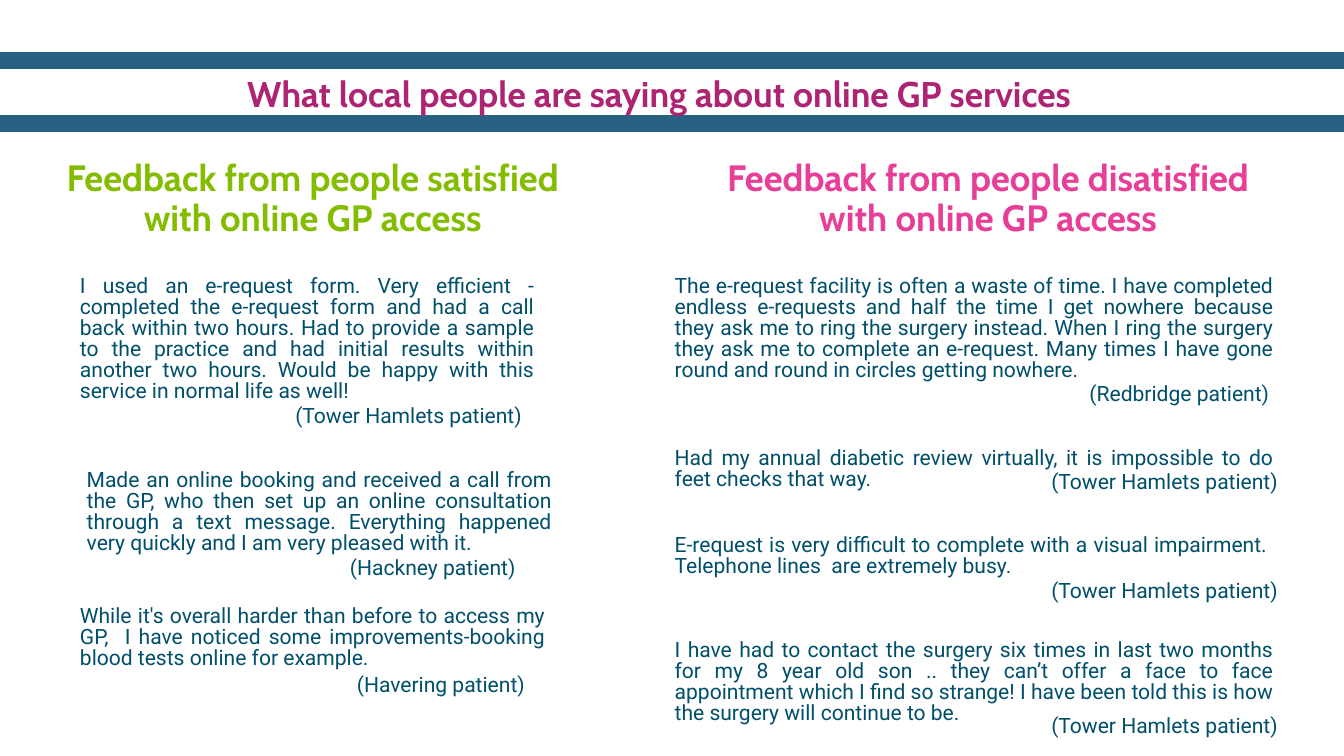
import pptx
import pptx.dml.color
import pptx.enum.shapes
import pptx.enum.text
import pptx.oxml
import pptx.util
from dataclasses import dataclass

Inches = pptx.util.Inches
Align = pptx.enum.text.PP_ALIGN


@dataclass(frozen=True)
class Style:
    font: str
    size: float
    lead: float
    color: str
    bold: bool = False
    align: Align = Align.CENTER


@dataclass(frozen=True)
class Theme:
    bar: str = "286181"
    bar_width: float = 18.75
    title: Style = Style("Cabin", 38.2, 53.5, "AD2473", True)
    good: Style = Style("Cabin", 39.2, 43.2, "84BD00", True)
    bad: Style = Style("Cabin", 39.2, 43.2, "E73E97", True)
    quote: Style = Style("Roboto", 22.6, 22.6, "004F6B", align=Align.JUSTIFY)
    source: Style = Style("Roboto", 22.6, 22.6, "004F6B")


THEME = Theme()
SOURCE_WIDTH, SOURCE_HEIGHT = 6.76, 0.33

QUOTES = [
    ((1.19, 4.11, 6.76, 1.9),
     "I used an e-request form. Very efficient - completed the e-request form and had a call "
     "back within two hours. Had to provide a sample to the practice and had initial results "
     "within another two hours. Would be happy with this service in normal life as well!",
     (2.7, 6.05), "Tower Hamlets"),
    ((1.29, 7, 6.92, 1.27),
     "Made an online booking and received a call from the GP, who then set up an online "
     "consultation through a text message. Everything happened very quickly and I am very "
     "pleased with it.",
     (3.06, 8.31), "Hackney"),
    ((1.19, 9.03, 6.92, 0.96),
     "While it's overall harder than before to access my GP,  I have noticed some "
     "improvements-booking blood tests online for example.",
     (3.18, 10.05), "Havering"),
    ((10.04, 4.11, 8.91, 1.58),
     "The e-request facility is often a waste of time. I have completed endless e-requests and "
     "half the time I get nowhere because they ask me to ring the surgery instead. When I ring "
     "the surgery they ask me to complete an e-request. Many times I have gone round and round "
     "in circles getting nowhere.",
     (14.17, 5.73), "Redbridge"),
    ((10.04, 6.68, 8.91, 0.65),
     "Had my annual diabetic review virtually, it is impossible to do feet checks that way.",
     (13.95, 7.03), "Tower Hamlets"),
    ((10.04, 7.97, 8.91, 0.65),
     "E-request is very difficult to complete with a visual impairment.  Telephone lines  are "
     "extremely busy.",
     (13.95, 8.66), "Tower Hamlets"),
    ((10.04, 9.53, 8.91, 1.27),
     "I have had to contact the surgery six times in last two months for my 8 year old son .. "
     "they can’t offer a face to face appointment which I find so strange! I have been told "
     "this is how the surgery will continue to be.",
     (13.95, 10.66), "Tower Hamlets"),
]


def rgb(code):
    """Turn a hex code into a colour."""
    return pptx.dml.color.RGBColor.from_string(code)


def add_bar(slide, left, right, y):
    """Draw one thick band across the slide."""
    bar = slide.shapes.add_connector(
        pptx.enum.shapes.MSO_CONNECTOR.STRAIGHT,
        Inches(left), Inches(y), Inches(right), Inches(y))
    bar.line.color.rgb = rgb(THEME.bar)
    bar.line.width = pptx.util.Pt(THEME.bar_width)
    props = bar.element.spPr
    props.append(props.makeelement(pptx.oxml.ns.qn("a:effectLst"), {}))


def add_text(slide, area, text, style):
    """Place one styled paragraph in a box without insets."""
    box = slide.shapes.add_textbox(*map(Inches, area))
    frame = box.text_frame
    frame.word_wrap = True
    frame.margin_left = frame.margin_right = frame.margin_top = frame.margin_bottom = 0
    para = frame.paragraphs[0]
    para.text = text
    para.alignment = style.align
    para.line_spacing = pptx.util.Pt(style.lead)
    para.font.name = style.font
    para.font.size = pptx.util.Pt(style.size)
    para.font.bold = style.bold
    para.font.color.rgb = rgb(style.color)


def add_quote(slide, area, words, spot, place):
    """Place a quote and the patient it came from."""
    add_text(slide, area, words, THEME.quote)
    add_text(slide, (*spot, SOURCE_WIDTH, SOURCE_HEIGHT), f"({place} patient)", THEME.source)


def main():
    """Build the feedback slide."""
    deck = pptx.Presentation()
    deck.slide_width, deck.slide_height = Inches(20), Inches(11.25)
    slide = deck.slides.add_slide(deck.slide_layouts[6])
    add_bar(slide, -2.19, 21.19, 0.9)
    add_bar(slide, -1.59, 21.78, 1.84)
    add_text(slide, (0, 0.96, 19.61, 0.73),
             "What local people are saying about online GP services", THEME.title)
    add_text(slide, (0.62, 2.36, 8.07, 1.22),
             "Feedback from people satisfied with online GP access", THEME.good)
    add_text(slide, (10.47, 2.36, 8.47, 1.22),
             "Feedback from people disatisfied with online GP access", THEME.bad)
    for quote in QUOTES:
        add_quote(slide, *quote)
    deck.save("out.pptx")


if __name__ == "__main__":
    main()
